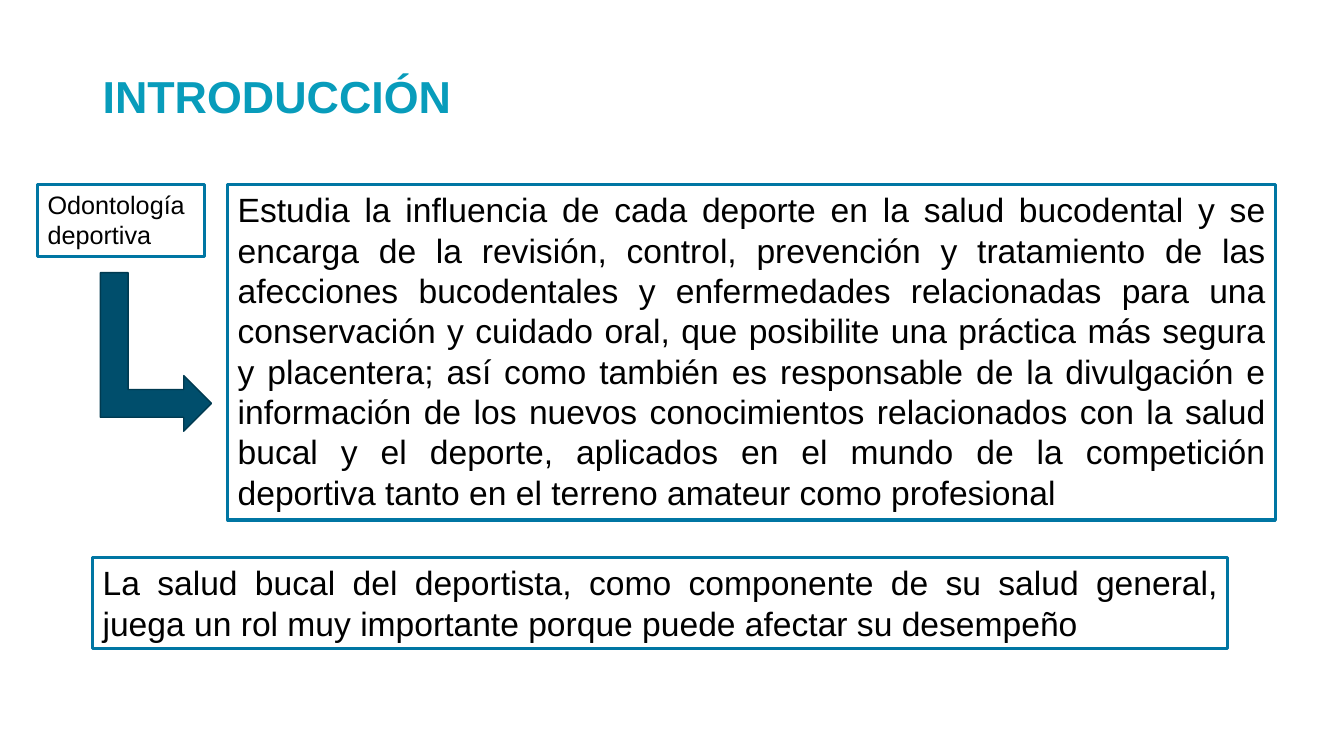
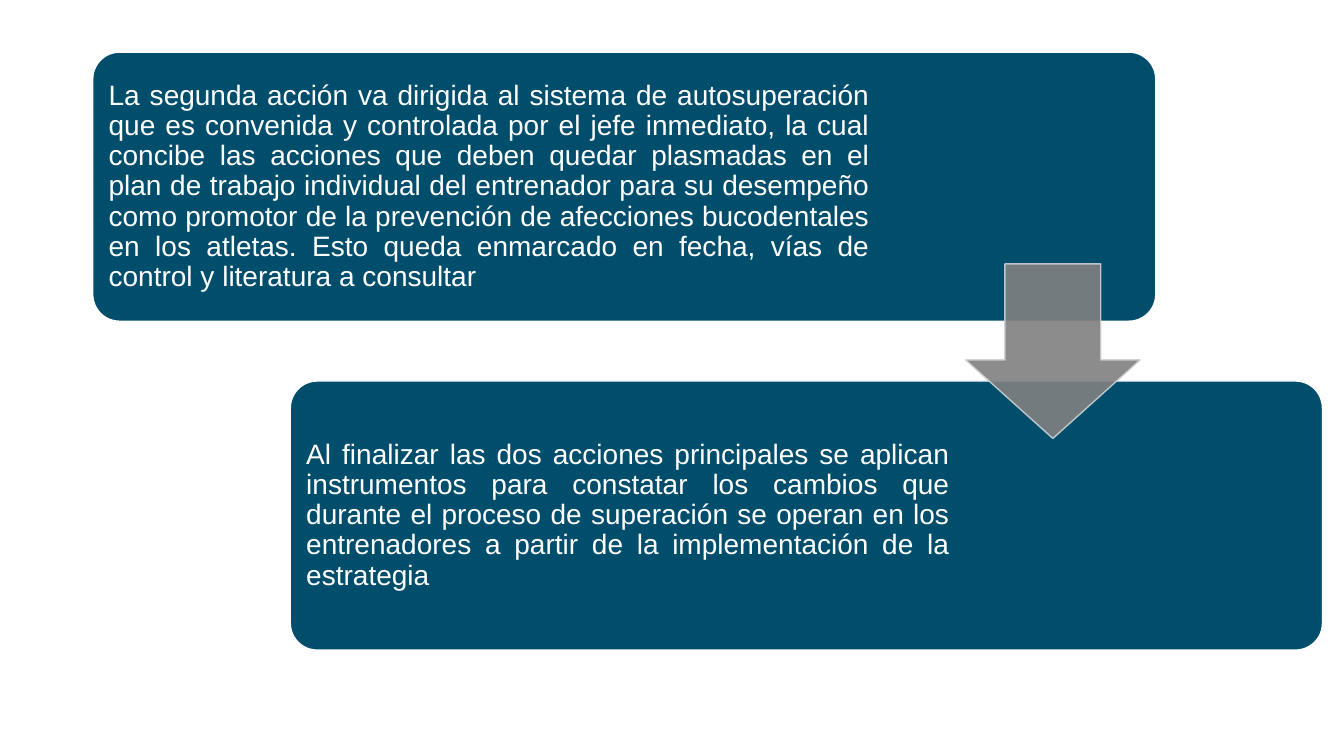
import pptx
import pptx.util
import pptx.dml.color
import pptx.enum.shapes
import pptx.enum.text
import lxml.etree
from dataclasses import dataclass

SHAPE = pptx.enum.shapes.MSO_SHAPE
ALIGN = pptx.enum.text.PP_ALIGN
ANCHOR = pptx.enum.text.MSO_ANCHOR
AUTO_SIZE = pptx.enum.text.MSO_AUTO_SIZE


@dataclass(frozen=True)
class Theme:
    font: str = "Arial"
    title: str = "089CBB"
    ink: str = "000000"
    paper: str = "FFFFFF"
    border: str = "0076A3"
    navy: str = "004E6C"
    navy_edge: str = "003A50"
    grey: str = "808080"
    grey_edge: str = "CCD0D4"
    title_size: int = 32
    body_size: int = 24
    card_size: int = 20
    label_size: int = 18
    box_line: float = 2.25
    thin_line: float = 1


theme = Theme()
presentation = pptx.Presentation()
presentation.slide_width = pptx.util.Inches(13.333)
presentation.slide_height = pptx.util.Inches(7.5)
width_unit = presentation.slide_width / 100
height_unit = presentation.slide_height / 100


def add_block(slide, kind, place, fill, line, line_width):
    """Add a filled shape; place is left, top, width, height in percent of the slide."""
    left, top, width, height = place
    shape = slide.shapes.add_shape(
        kind, round(left * width_unit), round(top * height_unit),
        round(width * width_unit), round(height * height_unit))
    shape.shadow.inherit = False
    shape.fill.solid()
    shape.fill.fore_color.rgb = pptx.dml.color.RGBColor.from_string(fill)
    shape.line.color.rgb = pptx.dml.color.RGBColor.from_string(line)
    shape.line.width = pptx.util.Pt(line_width)
    return shape


def write(shape, text, size, color, align=ALIGN.LEFT, anchor=ANCHOR.TOP):
    frame = shape.text_frame
    frame.word_wrap = True
    frame.vertical_anchor = anchor
    paragraph = frame.paragraphs[0]
    paragraph.text = text
    paragraph.alignment = align
    paragraph.font.name = theme.font
    paragraph.font.size = pptx.util.Pt(size)
    paragraph.font.color.rgb = pptx.dml.color.RGBColor.from_string(color)
    return paragraph


blank_layout = presentation.slide_layouts[6]
margin = 6.9

# Slide 1: title
slide = presentation.slides.add_slide(blank_layout)
title = slide.shapes.add_textbox(
    round(margin * width_unit), round(6.7 * height_unit),
    round(86.2 * width_unit), round(11.9 * height_unit))
write(title, "INTRODUCCIÓN", theme.title_size, theme.title,
      anchor=ANCHOR.MIDDLE).font.bold = True

# Slide 1: outlined boxes with the definition, its term and the conclusion
boxes = [
    ((16.95, 24.4, 77.95, 44.4), theme.body_size, ALIGN.JUSTIFY,
     "Estudia la influencia de cada deporte en la salud bucodental y se encarga de la "
     "revisión, control, prevención y tratamiento de las afecciones bucodentales y "
     "enfermedades relacionadas para una conservación y cuidado oral, que posibilite una "
     "práctica más segura y placentera; así como también es responsable de la divulgación "
     "e información de los nuevos conocimientos relacionados con la salud bucal y el "
     "deporte, aplicados en el mundo de la competición deportiva tanto en el terreno "
     "amateur como profesional"),
    ((2.8, 24.4, 12.4, 9.5), theme.label_size, ALIGN.LEFT, "Odontología deportiva"),
    ((margin, 73.7, 84.45, 12.1), theme.body_size, ALIGN.JUSTIFY,
     "La salud bucal del deportista, como componente de su salud general, juega un rol "
     "muy importante porque puede afectar su desempeño"),
]
for place, size, align, text in boxes:
    box = add_block(slide, SHAPE.RECTANGLE, place, theme.paper, theme.border, theme.box_line)
    write(box, text, size, theme.ink, align)
    box.text_frame.auto_size = AUTO_SIZE.SHAPE_TO_FIT_TEXT

# Slide 1: bent arrow from the term to its definition
bent_arrow = add_block(slide, SHAPE.BENT_UP_ARROW, (5.7, 39.2, 11.8, 14.7),
                       theme.navy, theme.navy_edge, theme.thin_line)
bent_arrow.rotation = 90

# Slide 2: two staggered cards, with room on the right for the arrow
slide = presentation.slides.add_slide(blank_layout)
card_height = 35.6
card_inset = 0.6
cards = [
    (margin, 6.9, 79.1, 20.7,
     "La segunda acción va dirigida al sistema de autosuperación que es convenida y "
     "controlada por el jefe inmediato, la cual concibe las acciones que deben quedar "
     "plasmadas en el plan de trabajo individual del entrenador para su desempeño como "
     "promotor de la prevención de afecciones bucodentales en los atletas. Esto queda "
     "enmarcado en fecha, vías de control y literatura a consultar"),
    (21.6, 50.4, 76.8, 27.15,
     "Al finalizar las dos acciones principales se aplican instrumentos para constatar "
     "los cambios que durante el proceso de superación se operan en los entrenadores a "
     "partir de la implementación de la estrategia"),
]
for left, top, width, free_right, text in cards:
    card = add_block(slide, SHAPE.ROUNDED_RECTANGLE, (left, top, width, card_height),
                     theme.navy, theme.paper, theme.thin_line)
    card.adjustments[0] = 0.1
    card.text_frame.margin_left = round(card_inset * width_unit)
    card.text_frame.margin_right = round(free_right * width_unit)
    paragraph = write(card, text, theme.card_size, theme.paper, ALIGN.JUSTIFY, ANCHOR.MIDDLE)
    paragraph.line_spacing = 0.9

# Slide 2: translucent arrow between the cards
down_arrow = add_block(slide, SHAPE.DOWN_ARROW, (71.85, 34.9, 12.98, 23.1),
                       theme.grey, theme.grey_edge, theme.thin_line)
down_arrow.adjustments[0] = 0.55
down_arrow.adjustments[1] = 0.45
color_tag = pptx.oxml.ns.qn("a:srgbClr")
for color in down_arrow.element.spPr.iter(color_tag):
    lxml.etree.SubElement(color, pptx.oxml.ns.qn("a:alpha"), val="90000")

presentation.save("out.pptx")
